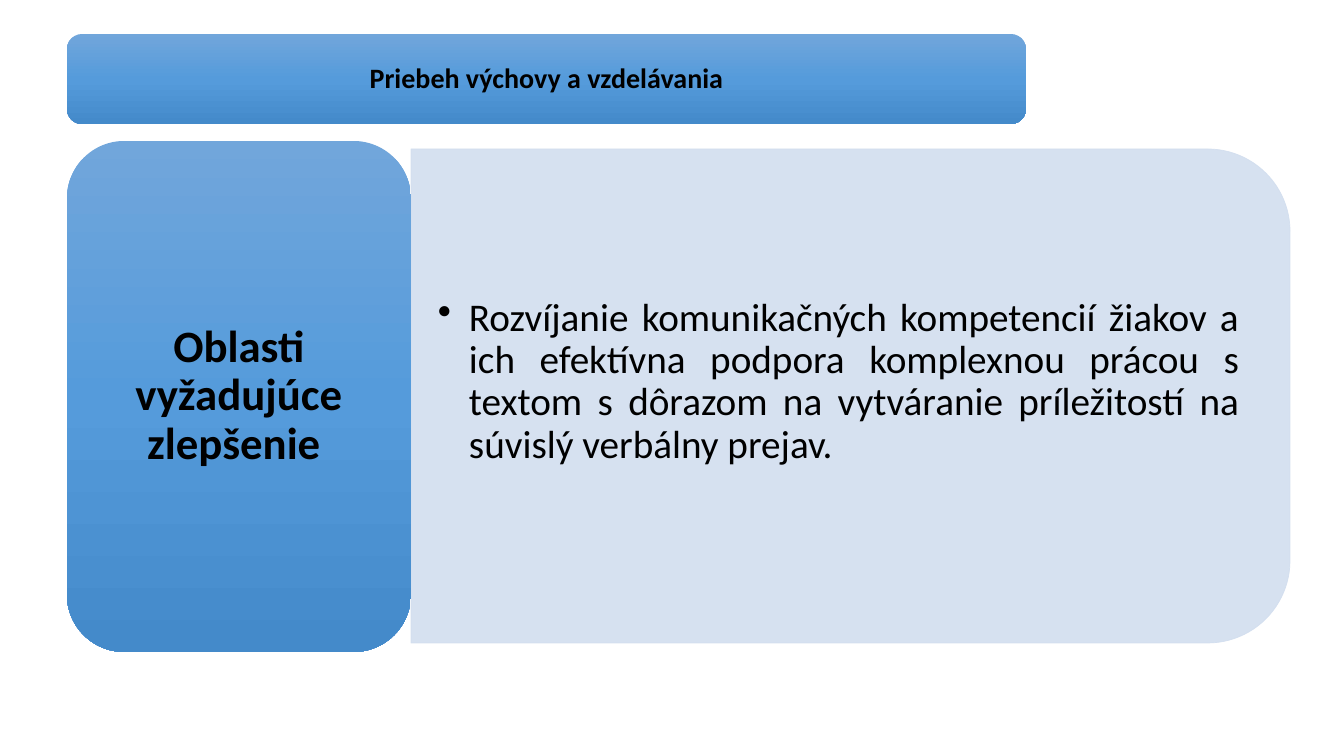
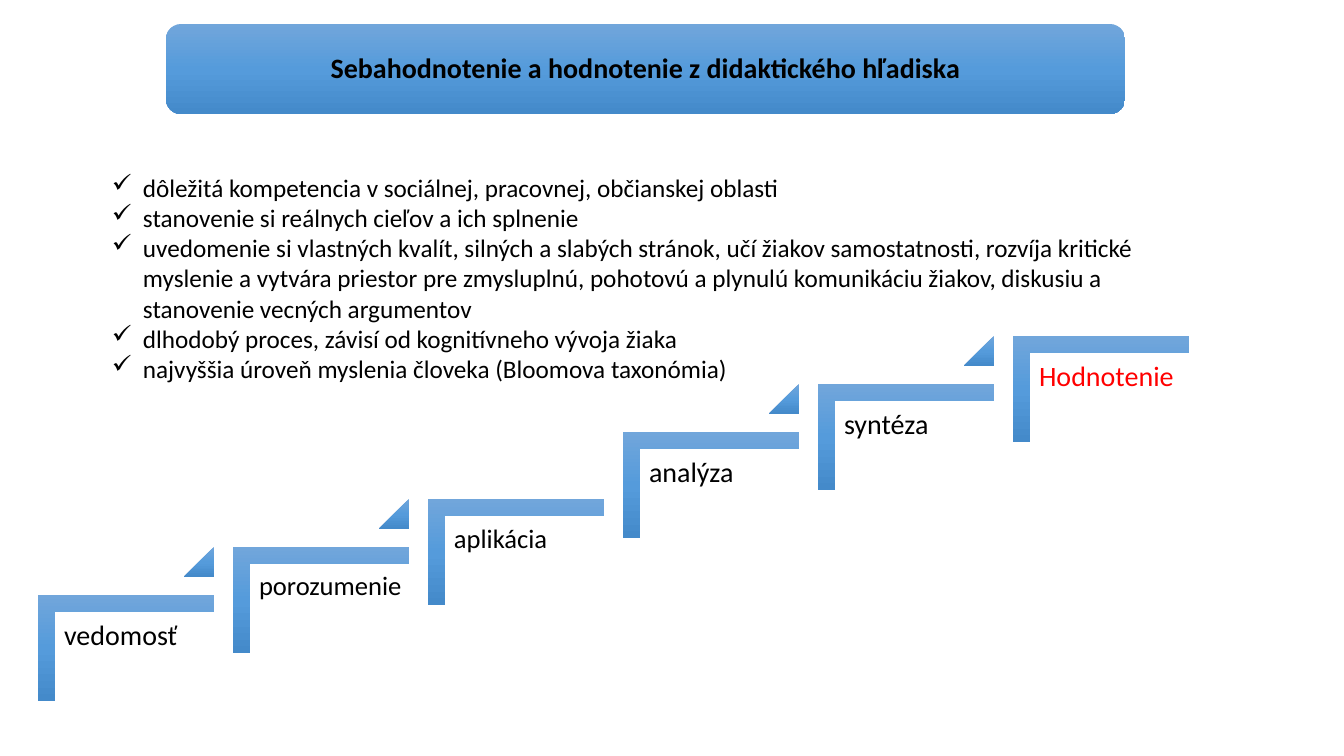
"""Build two slides on schooling: an area to improve and a staircase of thinking levels."""
from copy import deepcopy
from dataclasses import dataclass

from lxml.etree import SubElement
from pptx import Presentation
from pptx.dml.color import RGBColor
from pptx.enum.shapes import MSO_SHAPE
from pptx.enum.text import MSO_ANCHOR, PP_ALIGN
from pptx.oxml.ns import qn
from pptx.util import Pt


@dataclass(frozen=True)
class Theme:
    """Colours, font and type sizes shared by the slides."""
    font: str = "Calibri"
    ink: str = "000000"
    accent: str = "FF0000"
    panel: str = "D2DEEF"
    gradient: tuple = ("71A6DB", "559BDB", "448ACA")
    banner_size: int = 20
    card_size: int = 32
    panel_size: int = 28
    list_size: int = 18
    step_size: int = 20
    long_step_size: int = 19


THEME = Theme()
PX = 914400 / 100.8
SLIDE_SIZE = (1344, 756)
BANNER_SIZE = (959, 90)

IMPROVEMENT = {
    "banner": "Priebeh výchovy a vzdelávania",
    "banner_at": (67, 34),
    "card": "Oblasti vyžadujúce zlepšenie ",
    "points": ["Rozvíjanie komunikačných kompetencií žiakov a ich efektívna podpora "
               "komplexnou prácou s textom s dôrazom na vytváranie príležitostí na "
               "súvislý verbálny prejav."],
}
ASSESSMENT = {
    "banner": "Sebahodnotenie a hodnotenie z didaktického hľadiska",
    "banner_at": (166, 24),
    "points": [
        "dôležitá kompetencia v sociálnej, pracovnej, občianskej oblasti",
        "stanovenie si reálnych cieľov a ich splnenie",
        "uvedomenie si vlastných kvalít, silných a slabých stránok, učí žiakov samostatnosti, "
        "rozvíja kritické myslenie a vytvára priestor pre zmysluplnú, pohotovú a plynulú "
        "komunikáciu žiakov, diskusiu a stanovenie vecných argumentov",
        "dlhodobý proces, závisí od kognitívneho vývoja žiaka",
        "najvyššia úroveň myslenia človeka (Bloomova taxonómia)",
    ],
    "flights": [
        (595, [("vedomosť", THEME.step_size, THEME.ink),
               ("porozumenie", THEME.long_step_size, THEME.ink),
               ("aplikácia", THEME.long_step_size, THEME.ink)]),
        (432, [("analýza", THEME.step_size, THEME.ink),
               ("syntéza", THEME.step_size, THEME.ink),
               ("Hodnotenie", THEME.step_size, THEME.accent)]),
    ],
}
STEP_LEFT, STEP_RUN, STEP_RISE = 38, 195, 48
STEP_WIDTH, STEP_HEIGHT, MARKER = 176, 106, 30


def emu(*lengths):
    return [round(length * PX) for length in lengths]


def write(frame, texts, size, insets, color=THEME.ink, bold=False, align=PP_ALIGN.LEFT,
          anchor=MSO_ANCHOR.TOP, spacing=0.9, bullet=None):
    frame.word_wrap = True
    frame.vertical_anchor = anchor
    across, down = emu(*insets)
    frame.margin_left = frame.margin_right = across
    frame.margin_top = frame.margin_bottom = down
    for index, text in enumerate(texts):
        paragraph = frame.add_paragraph() if index else frame.paragraphs[0]
        paragraph.text = text
        paragraph.alignment = align
        paragraph.line_spacing = spacing
        if bullet:
            properties = paragraph._p.get_or_add_pPr()
            indent, = emu(31)
            properties.set("marL", str(indent))
            properties.set("indent", str(-indent))
            SubElement(properties, qn("a:buChar")).set("char", bullet)
        font = paragraph.font
        font.name, font.size, font.bold = THEME.font, Pt(size), bold
        font.color.rgb = RGBColor.from_string(color)


def add_text(slide, box, texts, size, insets, **style):
    write(slide.shapes.add_textbox(*emu(*box)).text_frame, texts, size, insets, **style)


def add_shape(slide, kind, box, turned=False):
    left, top, width, height = box
    if turned:
        left, top = left + (width - height) / 2, top + (height - width) / 2
        width, height = height, width
    shape = slide.shapes.add_shape(kind, *emu(left, top, width, height))
    shape.rotation = 90 if turned else 0
    shape.shadow.inherit = False
    shape.line.fill.background()
    return shape


def add_blue(slide, kind, box, turned=False):
    shape = add_shape(slide, kind, box, turned)
    shape.fill.gradient()
    shape.fill.gradient_angle = 270
    gradient = shape._element.spPr.find(qn("a:gradFill"))
    gradient.set("rotWithShape", "0")
    stops = gradient.find(qn("a:gsLst"))
    stops.insert(1, deepcopy(stops[0]))
    for stop, position, color in zip(shape.fill.gradient_stops, (0, 0.5, 1), THEME.gradient):
        stop.position = position
        stop.color.rgb = RGBColor.from_string(color)
    return shape


def add_panel(slide, box):
    panel = add_shape(slide, MSO_SHAPE.ROUND_2_SAME_RECTANGLE, box, turned=True)
    panel.line.width = Pt(0.5)
    for fill in (panel.fill, panel.line.fill):
        fill.solid()
        fill.fore_color.rgb = RGBColor.from_string(THEME.panel)
    for color in panel._element.spPr.iter(qn("a:srgbClr")):
        SubElement(color, qn("a:alpha")).set("val", "90000")


def add_label(slide, box, text, size, insets):
    label = add_blue(slide, MSO_SHAPE.ROUNDED_RECTANGLE, box)
    write(label.text_frame, [text], size, insets, bold=True,
          align=PP_ALIGN.CENTER, anchor=MSO_ANCHOR.MIDDLE)


def add_slide(deck, content):
    slide = deck.slides.add_slide(deck.slide_layouts[6])
    add_label(slide, (*content["banner_at"], *BANNER_SIZE), content["banner"],
              THEME.banner_size, (8, 8))
    return slide


def add_improvement(deck):
    slide = add_slide(deck, IMPROVEMENT)
    add_panel(slide, (411, 149, 879, 494))
    add_text(slide, (411, 174, 855, 416), IMPROVEMENT["points"], THEME.panel_size, (27, 14),
             align=PP_ALIGN.JUSTIFY, anchor=MSO_ANCHOR.MIDDLE, bullet="•")
    add_label(slide, (67, 141, 344, 511), IMPROVEMENT["card"], THEME.card_size, (13, 7))


def add_step(slide, left, top, text, size, color):
    corner = add_blue(slide, MSO_SHAPE.CORNER, (left, top, STEP_WIDTH, STEP_HEIGHT), turned=True)
    corner.adjustments[0] = corner.adjustments[1] = 0.16
    add_text(slide, (left + 18, top + 18, 159, 139), [text], size, (8, 8), color=color)


def add_marker(slide, left, top):
    marker = add_blue(slide, MSO_SHAPE.ISOSCELES_TRIANGLE, (left, top, MARKER, MARKER))
    marker.adjustments[0] = 1


def add_assessment(deck):
    slide = add_slide(deck, ASSESSMENT)
    add_text(slide, (102, 167, 1088, 224), ASSESSMENT["points"], THEME.list_size, (10, 5),
             spacing=1.0, bullet="✓")
    left = STEP_LEFT
    for base, steps in ASSESSMENT["flights"]:
        for level, step in enumerate(steps):
            top = base - level * STEP_RISE
            add_step(slide, left, top, *step)
            if level < len(steps) - 1:
                add_marker(slide, left + STEP_WIDTH - MARKER, top - STEP_RISE)
            left += STEP_RUN


def main():
    deck = Presentation()
    deck.slide_width, deck.slide_height = emu(*SLIDE_SIZE)
    add_improvement(deck)
    add_assessment(deck)
    deck.save("out.pptx")


if __name__ == "__main__":
    main()
